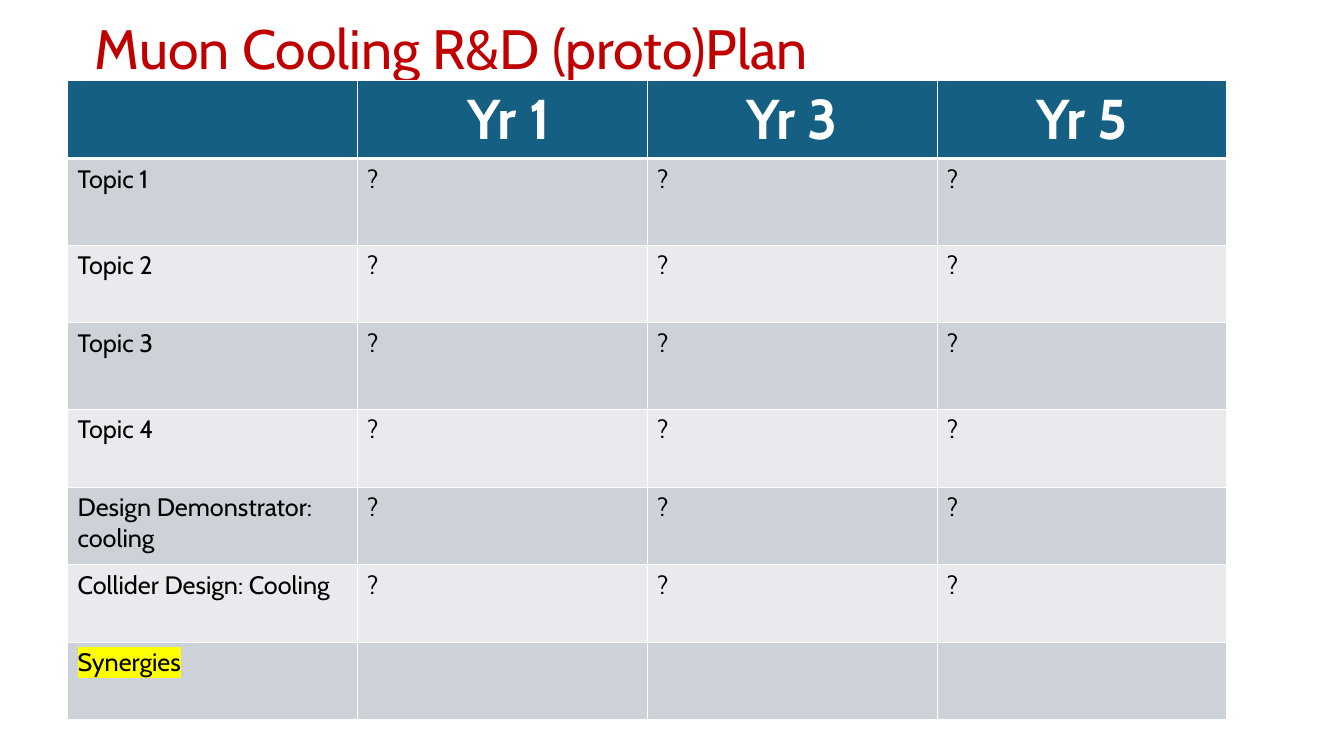
"""Build the Muon Cooling R&D plan slide with its topic-by-year table."""
from dataclasses import dataclass

from lxml import etree
from pptx import Presentation
from pptx.dml.color import RGBColor
from pptx.enum.text import MSO_ANCHOR, MSO_AUTO_SIZE, PP_ALIGN
from pptx.oxml.ns import qn
from pptx.util import Pt

PX = 9144
TITLE_ONLY = 5
LEFT, CENTER = PP_ALIGN.LEFT, PP_ALIGN.CENTER
TOP, MIDDLE = MSO_ANCHOR.TOP, MSO_ANCHOR.MIDDLE
NO_FIT = MSO_AUTO_SIZE.NONE


@dataclass(frozen=True)
class Theme:
    font: str = "Cabin"
    title: str = "C00000"
    header: str = "156082"
    bands: tuple[str, str] = ("CCD2D8", "E8EAED")
    white: str = "FFFFFF"
    black: str = "000000"
    highlight: str = "FFFF00"
    title_pt: float = 39.6
    header_pt: float = 40
    body_pt: float = 18
    rule_pt: float = 1
    header_rule_pt: float = 3


@dataclass(frozen=True)
class Row:
    cells: tuple[str, ...]
    height: int = 77
    highlight: str | None = None


THEME = Theme()
UNKNOWN = ("?",) * 3
HEADER = Row(("", " Yr 1", "Yr 3", "Yr 5"))
TOPICS = (
    Row(("Topic 1", *UNKNOWN), height=86),
    Row(("Topic 2", *UNKNOWN)),
    Row(("Topic 3", *UNKNOWN), height=86),
    Row(("Topic 4", *UNKNOWN)),
    Row(("Design Demonstrator: cooling", *UNKNOWN)),
    Row(("Collider Design: Cooling", *UNKNOWN)),
    Row(("Synergies", "", "", ""), highlight=THEME.highlight),
)


def px(n: int) -> int:
    return n * PX


def write(tf, text: str, *, size: float, color: str, bold: bool = False,
          align=LEFT, spacing: float = 1.0, highlight: str | None = None) -> None:
    p = tf.paragraphs[0]
    p.alignment = align
    p.line_spacing = spacing
    p.font.size = Pt(size)
    if not text:
        return
    r = p.add_run()
    r.text = text
    r.font.size = Pt(size)
    r.font.bold = bold
    r.font.color.rgb = RGBColor.from_string(color)
    if highlight:
        mark = etree.SubElement(r.font._element, qn("a:highlight"))
        etree.SubElement(mark, qn("a:srgbClr"), val=highlight)
    r.font.name = THEME.font


def set_borders(cell, top: float, bottom: float) -> None:
    tc_pr = cell._tc.get_or_add_tcPr()
    widths = {"L": THEME.rule_pt, "R": THEME.rule_pt, "T": top, "B": bottom}
    for i, (side, width) in enumerate(widths.items()):
        ln = etree.Element(qn(f"a:ln{side}"), w=str(Pt(width)))
        fill = etree.SubElement(ln, qn("a:solidFill"))
        etree.SubElement(fill, qn("a:srgbClr"), val=THEME.white)
        tc_pr.insert(i, ln)


def add_title(slide, text: str) -> None:
    sp = slide.shapes.title
    sp.left, sp.top, sp.width, sp.height = px(84), px(15), px(1150), px(73)
    tf = sp.text_frame
    tf.word_wrap = True
    tf.auto_size = NO_FIT
    tf.vertical_anchor = MIDDLE
    write(tf, text, size=THEME.title_pt, color=THEME.title, spacing=0.9)


def add_plan(slide, rows: tuple[Row, ...]) -> None:
    height = sum(row.height for row in rows)
    table = slide.shapes.add_table(len(rows), len(HEADER.cells), px(67), px(80),
                                   px(1150), px(height)).table
    for i, row in enumerate(rows):
        table.rows[i].height = px(row.height)
        is_header = i == 0
        fill = THEME.header if is_header else THEME.bands[(i - 1) % 2]
        top = THEME.header_rule_pt if i == 1 else THEME.rule_pt
        bottom = THEME.header_rule_pt if is_header else THEME.rule_pt
        for j, text in enumerate(row.cells):
            cell = table.cell(i, j)
            cell.fill.solid()
            cell.fill.fore_color.rgb = RGBColor.from_string(fill)
            cell.vertical_anchor = MIDDLE if is_header and text else TOP
            set_borders(cell, top, bottom)
            write(cell.text_frame, text,
                  size=THEME.header_pt if is_header and text else THEME.body_pt,
                  color=THEME.white if is_header else THEME.black,
                  bold=is_header, align=CENTER if is_header else LEFT,
                  highlight=row.highlight)


def main() -> None:
    prs = Presentation()
    prs.slide_width, prs.slide_height = px(1333), px(750)
    slide = prs.slides.add_slide(prs.slide_layouts[TITLE_ONLY])
    add_title(slide, "Muon Cooling R&D (proto)Plan")
    add_plan(slide, (HEADER, *TOPICS))
    prs.save("out.pptx")


if __name__ == "__main__":
    main()
